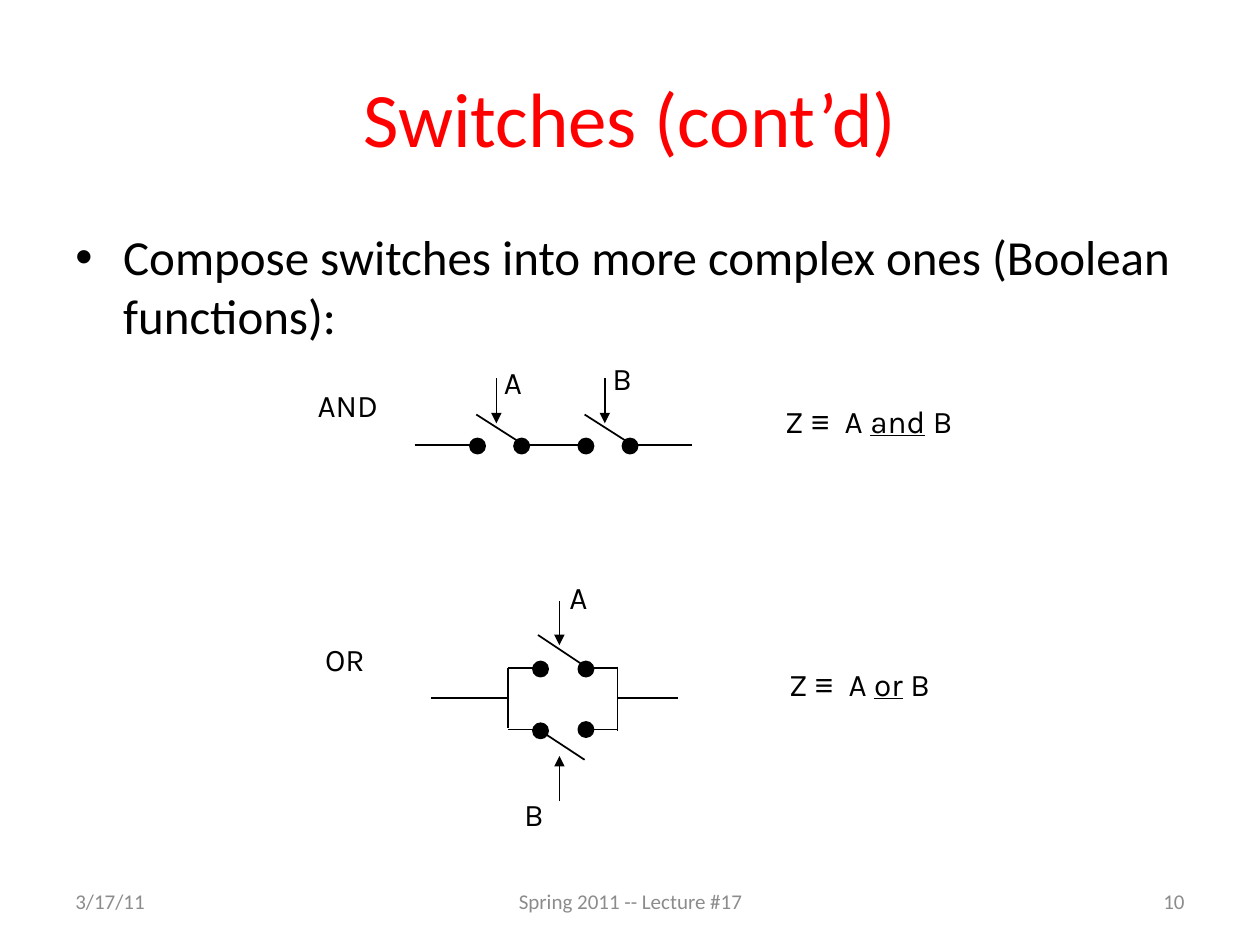
from typing import NamedTuple

from lxml import etree
from pptx import Presentation
from pptx.dml.color import RGBColor
from pptx.enum.shapes import MSO_CONNECTOR, MSO_SHAPE
from pptx.enum.text import MSO_ANCHOR, PP_ALIGN
from pptx.oxml.ns import qn
from pptx.util import Inches, Pt

STRAIGHT = MSO_CONNECTOR.STRAIGHT
OVAL = MSO_SHAPE.OVAL
TOP, MIDDLE = MSO_ANCHOR.TOP, MSO_ANCHOR.MIDDLE
LEFT, CENTER, RIGHT = PP_ALIGN.LEFT, PP_ALIGN.CENTER, PP_ALIGN.RIGHT

BLACK, RED, GRAY = "000000", "FF0000", "8C8C8C"
COLS, ROWS = 100, 75
DOT = 1.2
PITCH = 8.6


class Box(NamedTuple):
    col: float
    row: float
    cols: float
    rows: float


class Wire(NamedTuple):
    col1: float
    row1: float
    col2: float
    row2: float
    arrow: bool = False


class Dot(NamedTuple):
    col: float
    row: float


class Caption(NamedTuple):
    text: str
    box: Box


class Formula(NamedTuple):
    operator: str
    box: Box


class Footer(NamedTuple):
    text: str
    box: Box
    align: PP_ALIGN


prs = Presentation()
prs.slide_width, prs.slide_height = Inches(10), Inches(7.5)


def x(cols: float) -> int:
    return round(prs.slide_width * cols / COLS)


def y(rows: float) -> int:
    return round(prs.slide_height * rows / ROWS)


def place(box: Box) -> tuple:
    return x(box.col), y(box.row), x(box.cols), y(box.rows)


def color(value: str) -> RGBColor:
    return RGBColor.from_string(value)


def style(p, size: float, name: str, value: str, align=LEFT) -> None:
    p.alignment = align
    p.font.size, p.font.name = Pt(size), name
    p.font.color.rgb = color(value)


def add_text(s, box: Box, wrap: bool = True, anchor=TOP):
    tf = s.shapes.add_textbox(*place(box)).text_frame
    tf.word_wrap, tf.vertical_anchor = wrap, anchor
    return tf


def add_label(s, box: Box):
    tf = add_text(s, box, wrap=False)
    tf.margin_left = tf.margin_right = Inches(0.02)
    tf.margin_top = tf.margin_bottom = Inches(0.03)
    p = tf.paragraphs[0]
    style(p, 18, "Karla", BLACK)
    p.line_spacing = Pt(26)
    return p


def add_caption(s, caption: Caption) -> None:
    add_label(s, caption.box).add_run().text = caption.text


def add_formula(s, formula: Formula) -> None:
    p = add_label(s, formula.box)
    p.space_before = Pt(11)
    for text in ("Z ", "≡", " A ", formula.operator, " B"):
        r = p.add_run()
        r.text = text
        r.font.name = "Arial" if text == "≡" else "Karla"
        r.font.underline = text == formula.operator
        if text == "≡":
            r.font._element.set("spc", "450")


def add_wire(s, wire: Wire) -> None:
    line = s.shapes.add_connector(
        STRAIGHT, x(wire.col1), y(wire.row1), x(wire.col2), y(wire.row2))
    line.line.width = Pt(1)
    line.line.color.rgb = color(BLACK)
    pr = line._element.spPr
    if wire.arrow:
        etree.SubElement(pr.find(qn("a:ln")), qn("a:tailEnd"), type="triangle")
    etree.SubElement(pr, qn("a:effectLst"))


def add_dot(s, dot: Dot) -> None:
    box = Box(dot.col - DOT / 2, dot.row - DOT / 2, DOT, DOT)
    sp = s.shapes.add_shape(OVAL, *place(box))
    sp.shadow.inherit = False
    sp.fill.solid()
    sp.fill.fore_color.rgb = color(BLACK)
    sp.line.color.rgb = color(BLACK)
    sp.line.width = Pt(1)


def add_title(s, text: str) -> None:
    title = s.shapes.title
    title.left, title.top, title.width, title.height = place(Box(5, 3, 90, 12.5))
    tf = title.text_frame
    tf.text, tf.vertical_anchor = text, MIDDLE
    style(tf.paragraphs[0], 44, "Calibri", RED, CENTER)


def add_bullet(s, text: str) -> None:
    p = add_text(s, Box(5, 17.5, 90, 49.5)).paragraphs[0]
    p.text = text
    style(p, 28, "Calibri", BLACK)
    p.space_before = Pt(5.6)
    pr = p._p.get_or_add_pPr()
    pr.set("marL", str(Inches(0.38)))
    pr.set("indent", str(-Inches(0.38)))
    etree.SubElement(pr, qn("a:buFont"), typeface="Arial").addnext(
        etree.Element(qn("a:buChar"), char="•"))
    pr.append(pr.find(qn("a:defRPr")))


def add_footer(s, footer: Footer) -> None:
    p = add_text(s, footer.box, anchor=MIDDLE).paragraphs[0]
    p.text = footer.text
    style(p, 12, "Calibri", GRAY, footer.align)


def series_switch(col: float) -> list:
    return [
        Wire(col, 32.9, col + 3.6, 35.2),
        Wire(col + 3.7, 35.3, col + 8.5, 35.3),
        Wire(col + 1.6, 30, col + 1.6, 33.6, arrow=True),
        Dot(col + 0.1, 35.4),
        Dot(col + 3.6, 35.4),
    ]


AND_CIRCUIT = [Wire(32.9, 35.3, 37.7, 35.3)] + [
    part for i in range(2) for part in series_switch(37.8 + i * PITCH)]

OR_CIRCUIT = [
    Wire(34.2, 55.4, 40.3, 55.4),
    Wire(49, 55.4, 53.8, 55.4),
    Wire(40.3, 53, 40.3, 57.8),
    Wire(49, 52.9, 49, 58),
    *(Wire(c1, row, c2, row) for row in (53, 57.9)
      for c1, c2 in ((40.3, 42.8), (46.5, 49))),
    Wire(46.6, 53, 42.7, 50.4),
    Wire(42.9, 58, 46.4, 60.3),
    Wire(44.4, 47.7, 44.4, 51.2, arrow=True),
    Wire(44.4, 63.6, 44.4, 60, arrow=True),
    Dot(42.9, 53.1), Dot(46.5, 53.1), Dot(42.9, 58), Dot(46.5, 57.9),
]

CAPTIONS = [
    Caption("AND", Box(25, 29.7, 9.9, 4.9)),
    Caption("OR", Box(25.6, 49.9, 8.2, 4.9)),
    Caption("A", Box(39.8, 27.9, 6, 4.9)),
    Caption("B", Box(48.4, 27.6, 6, 4.9)),
    Caption("A", Box(45, 45, 6, 4.9)),
    Caption("B", Box(41.4, 62.2, 6, 4.9)),
]

FORMULAS = [
    Formula("and", Box(62.1, 31, 17.3, 6.4)),
    Formula("or", Box(62.4, 51.9, 15.9, 6.4)),
]

FOOTERS = [
    Footer("3/17/11", Box(5, 69.5, 23.3, 4), LEFT),
    Footer("Spring 2011 -- Lecture #17", Box(34.2, 69.5, 31.7, 4), CENTER),
    Footer("10", Box(71.7, 69.5, 23.3, 4), RIGHT),
]

DRAW = {Wire: add_wire, Dot: add_dot, Caption: add_caption,
        Formula: add_formula, Footer: add_footer}


def main() -> None:
    s = prs.slides.add_slide(prs.slide_layouts[5])
    add_title(s, "Switches (cont’d)")
    add_bullet(s, "Compose switches into more complex ones (Boolean functions):")
    for item in AND_CIRCUIT + OR_CIRCUIT + CAPTIONS + FORMULAS + FOOTERS:
        DRAW[type(item)](s, item)
    prs.save("out.pptx")


if __name__ == "__main__":
    main()
